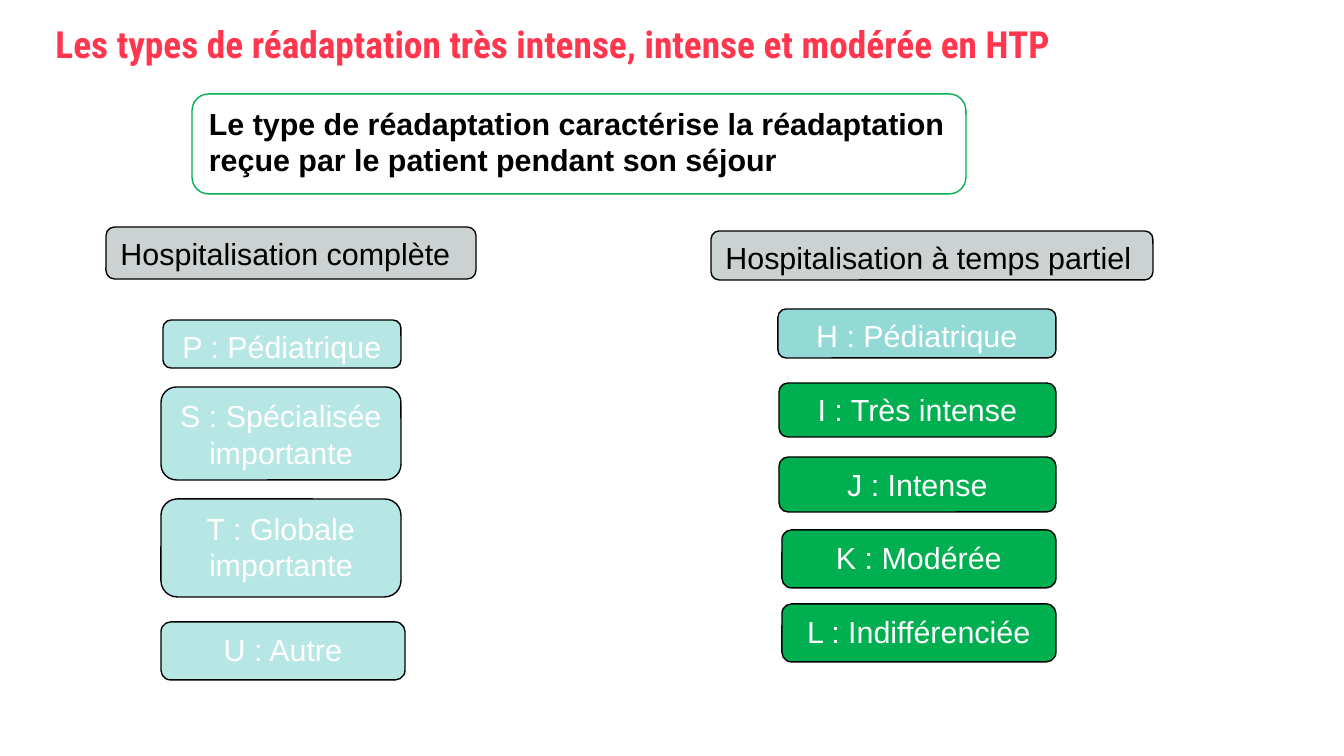
from pptx import Presentation
from pptx import util as u
from pptx.dml.color import RGBColor
from pptx.enum import shapes, text

PX = 914400 / 134.4
BLACK, WHITE = "000000", "FFFFFF"
GREY, PALE, TEAL, GREEN = "CCD1D1", "B7E7E4", "93DAD7", "00B050"

FULL_STAY = [
    ("P : Pédiatrique", (163, 320, 238, 48), PALE),
    ("S : Spécialisée importante", (161, 387, 240, 93), PALE),
    ("T : Globale importante", (161, 499, 240, 98), PALE),
    ("U : Autre", (161, 622, 244, 58), PALE),
]
PART_TIME = [
    ("H : Pédiatrique", (778, 309, 278, 49), TEAL),
    ("I : Très intense", (779, 383, 277, 54), GREEN),
    ("J : Intense", (779, 457, 277, 55), GREEN),
    ("K : Modérée", (782, 530, 274, 58), GREEN),
    ("L : Indifférenciée", (782, 604, 274, 58), GREEN),
]


def px(n):
    return u.Emu(round(n * PX))


def paint(color_format, color):
    color_format.rgb = RGBColor.from_string(color)


def set_font(paragraph, name, size, color, bold=False):
    paragraph.font.name = name
    paragraph.font.size = u.Pt(size)
    paragraph.font.bold = bold
    paint(paragraph.font.color, color)


def add_title(slide, wording):
    title = slide.shapes.title
    title.left, title.top, title.width, title.height = map(px, (42, 0, 1292, 67))
    frame = title.text_frame
    frame.text = wording
    frame.auto_size = text.MSO_AUTO_SIZE.NONE
    frame.vertical_anchor = text.MSO_ANCHOR.TOP
    heading = frame.paragraphs[0]
    heading.alignment = text.PP_ALIGN.LEFT
    heading.line_spacing = u.Pt(31.8)
    set_font(heading, "Roboto Condensed", 20, "FF364D", True)


def add_box(slide, wording, place, fill=None, line=BLACK, color=BLACK,
            align=text.PP_ALIGN.LEFT, bold=False):
    box = slide.shapes.add_shape(
        shapes.MSO_SHAPE.ROUNDED_RECTANGLE, *map(px, place))
    box.shadow.inherit = False
    if fill:
        box.fill.solid()
        paint(box.fill.fore_color, fill)
    else:
        box.fill.background()
    paint(box.line.color, line)
    box.line.width = u.Pt(0.75)
    frame = box.text_frame
    frame.word_wrap = True
    frame.vertical_anchor = text.MSO_ANCHOR.TOP
    frame.margin_left = frame.margin_right = px(12)
    frame.margin_top = frame.margin_bottom = px(6)
    frame.text = wording
    for paragraph in frame.paragraphs:
        paragraph.alignment = align
        set_font(paragraph, "Arial", 16.3, color, bold)


def main():
    deck = Presentation()
    deck.slide_width, deck.slide_height = px(1344), px(756)
    slide = deck.slides.add_slide(deck.slide_layouts.get_by_name("Title Only"))
    add_title(slide, "Les types de réadaptation très intense, intense et modérée en HTP")
    add_box(slide, "Le type de réadaptation caractérise la réadaptation\n"
            "reçue par le patient pendant son séjour",
            (192, 94, 774, 100), line=GREEN, bold=True)
    add_box(slide, "Hospitalisation complète", (106, 227, 370, 52), GREY)
    add_box(slide, "Hospitalisation à temps partiel", (711, 231, 442, 49), GREY)
    for wording, place, fill in FULL_STAY + PART_TIME:
        add_box(slide, wording, place, fill, color=WHITE,
                align=text.PP_ALIGN.CENTER)
    deck.save("out.pptx")


if __name__ == "__main__":
    main()
